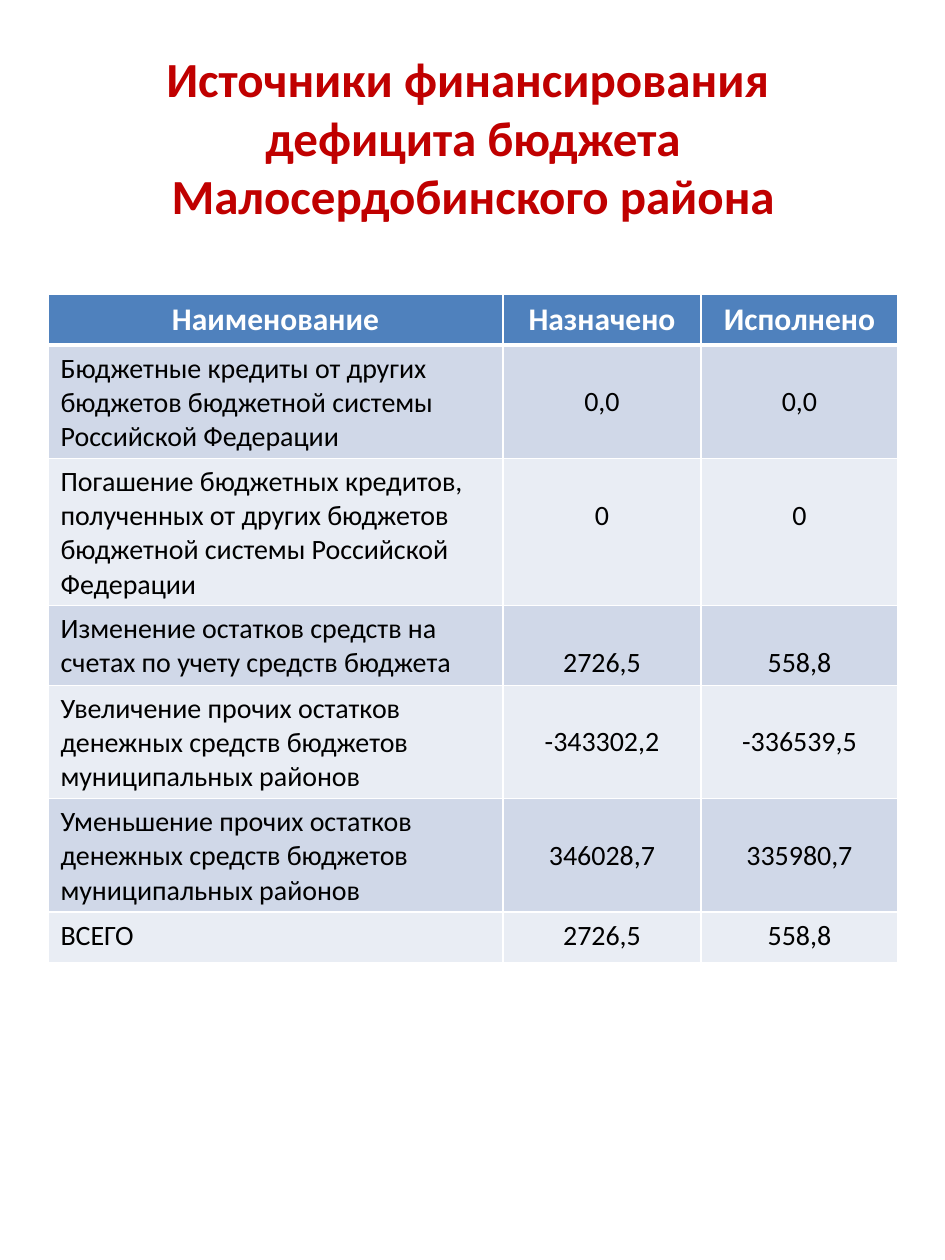
from lxml.etree import SubElement
from pptx import Presentation
from pptx.dml.color import RGBColor
from pptx.enum.text import MSO_ANCHOR, PP_ALIGN
from pptx.oxml import parse_xml
from pptx.oxml.ns import nsdecls
from pptx.util import Pt

# Content
TITLE = "Источники финансирования \vдефицита бюджета Малосердобинского района"
ROWS = [
    ("Наименование", "Назначено", "Исполнено"),
    ("Бюджетные кредиты от других бюджетов бюджетной системы Российской Федерации",
     "0,0", "0,0"),
    ("Погашение бюджетных кредитов, полученных от других бюджетов "
     "бюджетной системы Российской Федерации", "0", "0"),
    ("Изменение остатков средств на счетах по учету средств бюджета",
     "2726,5", "558,8"),
    ("Увеличение прочих остатков денежных средств бюджетов муниципальных районов",
     "-343302,2", "-336539,5"),
    ("Уменьшение прочих остатков денежных средств бюджетов муниципальных районов",
     "346028,7", "335980,7"),
    ("ВСЕГО", "2726,5", "558,8"),
]
COLORS = {"title": "C00000", "head": "4F81BD", "odd": "D0D8E8",
          "even": "E9EDF4", "line": "FFFFFF", "text": "000000"}

# Layout in px, 126 to the inch
PX = 914400 // 126
LEFT, WIDTH = 48, 850
TITLE_TOP, TITLE_H = 50, 173
TABLE_TOP, ROW_H = 294, 51
COLS = [455, 198, 197]
DROP = 40  # puts a value level with the second line of its label


def px(n):
    return n * PX


def style(par, size, color, bold=False, align=PP_ALIGN.CENTER):
    par.alignment = align
    font = par.font
    font.name, font.size, font.bold = "Calibri", Pt(size), bold
    font.color.rgb = RGBColor.from_string(COLORS[color])


def border(cell, row):
    props = cell._tc.get_or_add_tcPr()
    thick = {0: "lnB", 1: "lnT"}.get(row)  # rule under the header
    for i, side in enumerate(("lnL", "lnR", "lnT", "lnB")):
        width = Pt(3 if side == thick else 1)
        line = parse_xml(
            f'<a:{side} {nsdecls("a")} w="{width}"><a:solidFill>'
            f'<a:srgbClr val="{COLORS["line"]}"/></a:solidFill></a:{side}>')
        props.insert(i, line)


deck = Presentation()
deck.slide_width, deck.slide_height = px(945), px(1260)
slide = deck.slides.add_slide(deck.slide_layouts[6])

# Title
box = slide.shapes.add_textbox(px(LEFT), px(TITLE_TOP), px(WIDTH), px(TITLE_H))
frame = box.text_frame
frame.word_wrap = True
frame.vertical_anchor = MSO_ANCHOR.MIDDLE
frame.text = TITLE
style(frame.paragraphs[0], 28, "title", True)

# Table
table = slide.shapes.add_table(
    len(ROWS), len(COLS), px(LEFT), px(TABLE_TOP),
    px(WIDTH), px(ROW_H * len(ROWS))).table
for col, width in zip(table.columns, COLS):
    col.width = px(width)

for r, row in enumerate(ROWS):
    fill = "head" if r == 0 else "odd" if r % 2 else "even"
    for c, text in enumerate(row):
        cell = table.cell(r, c)
        cell.text = text
        cell.fill.solid()
        cell.fill.fore_color.rgb = RGBColor.from_string(COLORS[fill])
        border(cell, r)
        par = cell.text_frame.paragraphs[0]
        if r == 0:
            style(par, 18, "line", True)
        else:
            style(par, 16, "text", align=PP_ALIGN.CENTER if c else PP_ALIGN.LEFT)
        if c and 0 < r < len(ROWS) - 1:
            cell.margin_top = px(DROP)

deck.save("out.pptx")
